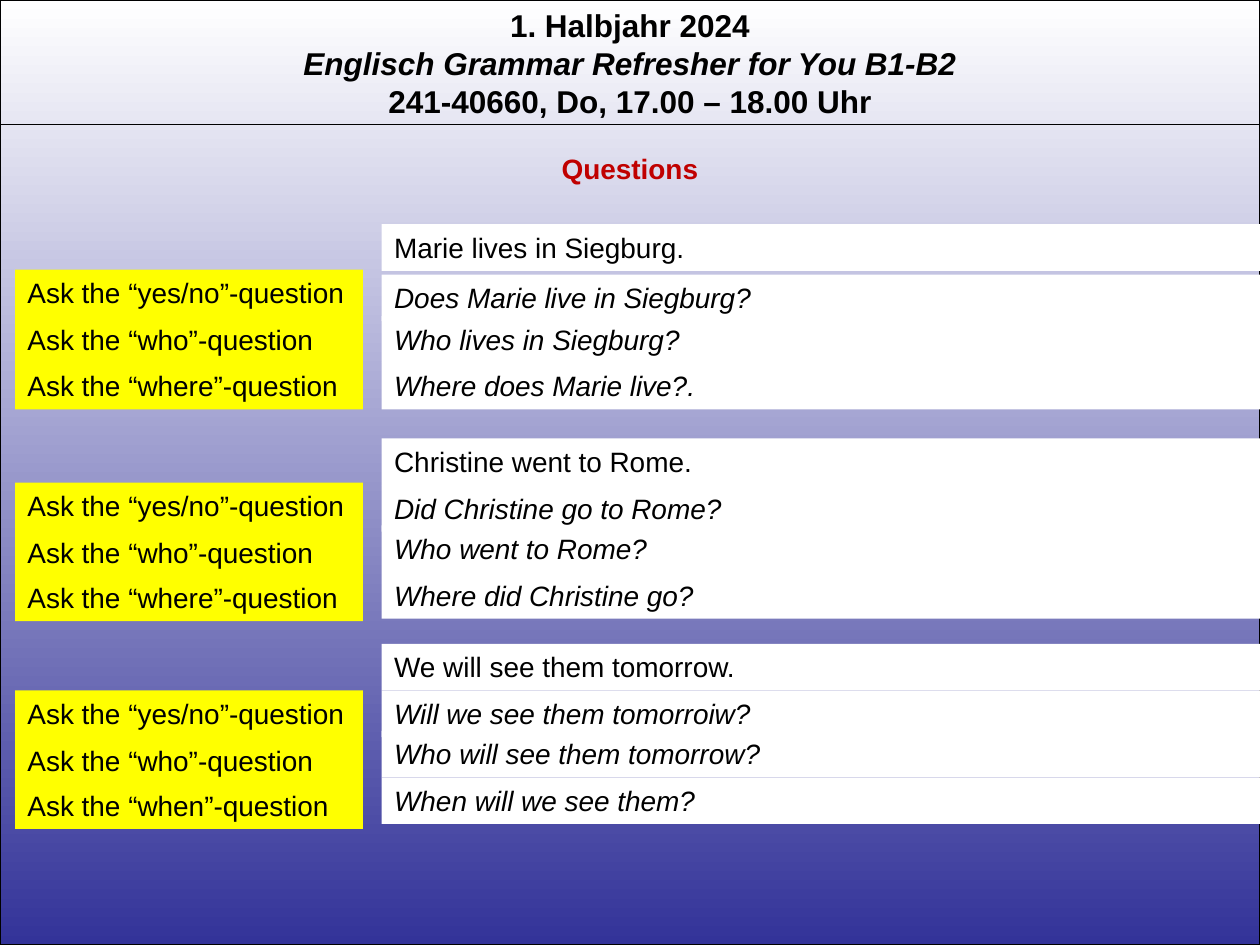
from dataclasses import dataclass

from lxml.etree import SubElement
from pptx import Presentation
from pptx.dml.color import RGBColor
from pptx.enum.shapes import MSO_CONNECTOR, MSO_SHAPE
from pptx.enum.text import MSO_ANCHOR, MSO_AUTO_SIZE, PP_ALIGN
from pptx.oxml.ns import qn
from pptx.util import Inches, Pt

BLACK = RGBColor(0x00, 0x00, 0x00)
WHITE = RGBColor(0xFF, 0xFF, 0xFF)
YELLOW = RGBColor(0xFF, 0xFF, 0x00)
RED = RGBColor(0xC0, 0x00, 0x00)
INDIGO = RGBColor(0x33, 0x33, 0x99)

FONT = "Arial"
SLIDE_WIDTH, SLIDE_HEIGHT = 10, 7.5
ROW_HEIGHT = 0.37
PROMPT_LEFT, PROMPT_WIDTH = 0.12, 2.76
ANSWER_LEFT = 3.03
ANSWER_WIDTH = SLIDE_WIDTH - ANSWER_LEFT
RULE_TOP = 0.99


@dataclass
class Question:
    kind: str
    prompt_top: float
    answer: str
    answer_top: float


@dataclass
class Exercise:
    sentence: str
    top: float
    questions: list[Question]


EXERCISES = [
    Exercise("Marie lives in Siegburg.", 1.78, [
        Question("yes/no", 2.14, "Does Marie live in Siegburg?", 2.18),
        Question("who", 2.51, "Who lives in Siegburg?", 2.51),
        Question("where", 2.88, "Where does Marie live?.", 2.88),
    ]),
    Exercise("Christine went to Rome.", 3.48, [
        Question("yes/no", 3.83, "Did Christine go to Rome?", 3.85),
        Question("who", 4.2, "Who went to Rome?", 4.17),
        Question("where", 4.56, "Where did Christine go?", 4.54),
    ]),
    Exercise("We will see them tomorrow.", 5.11, [
        Question("yes/no", 5.48, "Will we see them tomorroiw?", 5.48),
        Question("who", 5.85, "Who will see them tomorrow?", 5.8),
        Question("when", 6.21, "When will we see them?", 6.17),
    ]),
]


def write(paragraph, text: str, *, size=16, color=BLACK, bold=False,
          italic=False, align=PP_ALIGN.LEFT) -> None:
    paragraph.alignment = align
    run = paragraph.add_run()
    run.text = text
    run.font.name = FONT
    run.font.size = Pt(size)
    run.font.color.rgb = color
    run.font.bold = bold
    run.font.italic = italic


def prepare_frame(shape):
    """Make the text wrap, start at the top and set the shape's height."""
    frame = shape.text_frame
    frame.word_wrap = True
    frame.vertical_anchor = MSO_ANCHOR.TOP
    frame.auto_size = MSO_AUTO_SIZE.SHAPE_TO_FIT_TEXT
    return frame


def add_row(slide, left: float, top: float, width: float, text: str,
            fill: RGBColor, italic: bool = False) -> None:
    shape = slide.shapes.add_shape(
        MSO_SHAPE.RECTANGLE, Inches(left), Inches(top), Inches(width), Inches(ROW_HEIGHT))
    shape.shadow.inherit = False
    shape.fill.solid()
    shape.fill.fore_color.rgb = fill
    shape.line.fill.background()
    write(prepare_frame(shape).paragraphs[0], text, italic=italic)


def add_backdrop(slide):
    backdrop = slide.shapes.add_shape(
        MSO_SHAPE.RECTANGLE, 0, 0, Inches(SLIDE_WIDTH), Inches(SLIDE_HEIGHT))
    backdrop.shadow.inherit = False
    backdrop.fill.gradient()
    backdrop.fill.gradient_angle = 270
    for stop, color, position in zip(backdrop.fill.gradient_stops, (WHITE, INDIGO), (0, 1)):
        stop.color.rgb = color
        stop.position = position
    backdrop.line.color.rgb = BLACK
    backdrop.line.width = Pt(0.75)
    return backdrop


def add_header(slide) -> None:
    header = slide.shapes.add_textbox(0, 0, Inches(SLIDE_WIDTH), Inches(1.01))
    frame = prepare_frame(header)
    lines = [
        ("1. Halbjahr 2024", False),
        ("Englisch Grammar Refresher for You B1-B2", True),
        ("241-40660, Do, 17.00 – 18.00 Uhr", False),
    ]
    for index, (text, italic) in enumerate(lines):
        paragraph = frame.add_paragraph() if index else frame.paragraphs[0]
        write(paragraph, text, size=18, bold=True, italic=italic, align=PP_ALIGN.CENTER)

    rule = slide.shapes.add_connector(
        MSO_CONNECTOR.STRAIGHT, 0, Inches(RULE_TOP), Inches(SLIDE_WIDTH), Inches(RULE_TOP))
    rule.line.color.rgb = BLACK
    rule.line.width = Pt(0.75)
    SubElement(rule.element.spPr, qn("a:effectLst"))


def format_title(title) -> None:
    title.left, title.top = Inches(0), Inches(1.15)
    title.width, title.height = Inches(SLIDE_WIDTH), Inches(ROW_HEIGHT)
    write(prepare_frame(title).paragraphs[0], "Questions", color=RED, bold=True,
          align=PP_ALIGN.CENTER)


def add_exercise(slide, exercise: Exercise) -> None:
    add_row(slide, ANSWER_LEFT, exercise.top, ANSWER_WIDTH, exercise.sentence, WHITE)
    for question in exercise.questions:
        add_row(slide, PROMPT_LEFT, question.prompt_top, PROMPT_WIDTH,
                f"Ask the “{question.kind}”-question", YELLOW)
        add_row(slide, ANSWER_LEFT, question.answer_top, ANSWER_WIDTH,
                question.answer, WHITE, italic=True)


def main() -> None:
    presentation = Presentation()
    presentation.slide_width = Inches(SLIDE_WIDTH)
    presentation.slide_height = Inches(SLIDE_HEIGHT)
    slide = presentation.slides.add_slide(presentation.slide_layouts.get_by_name("Title Only"))

    title = slide.shapes.title
    format_title(title)
    backdrop = add_backdrop(slide)
    title.element.addprevious(backdrop.element)
    add_header(slide)
    for exercise in EXERCISES:
        add_exercise(slide, exercise)
    presentation.save("out.pptx")


if __name__ == "__main__":
    main()
